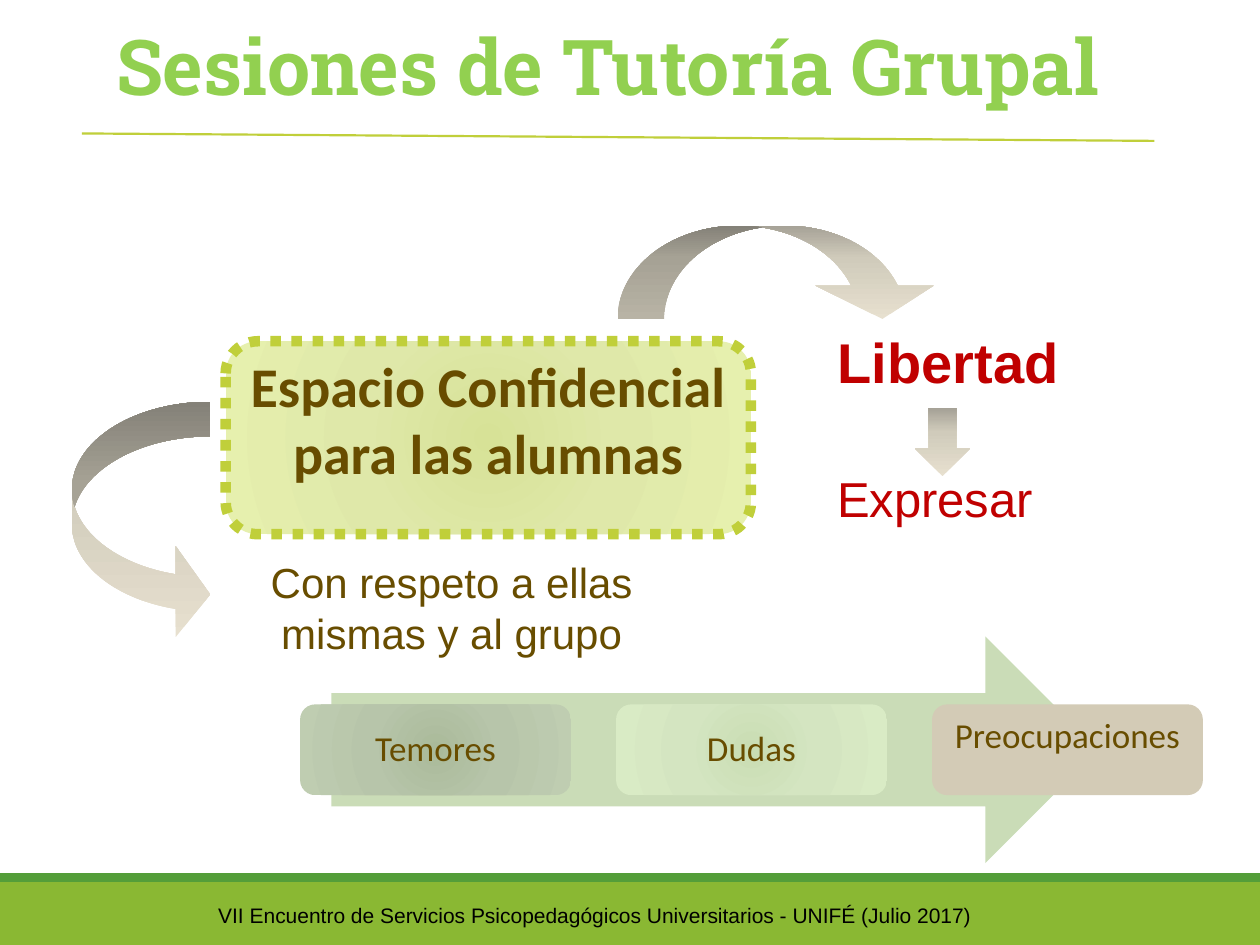
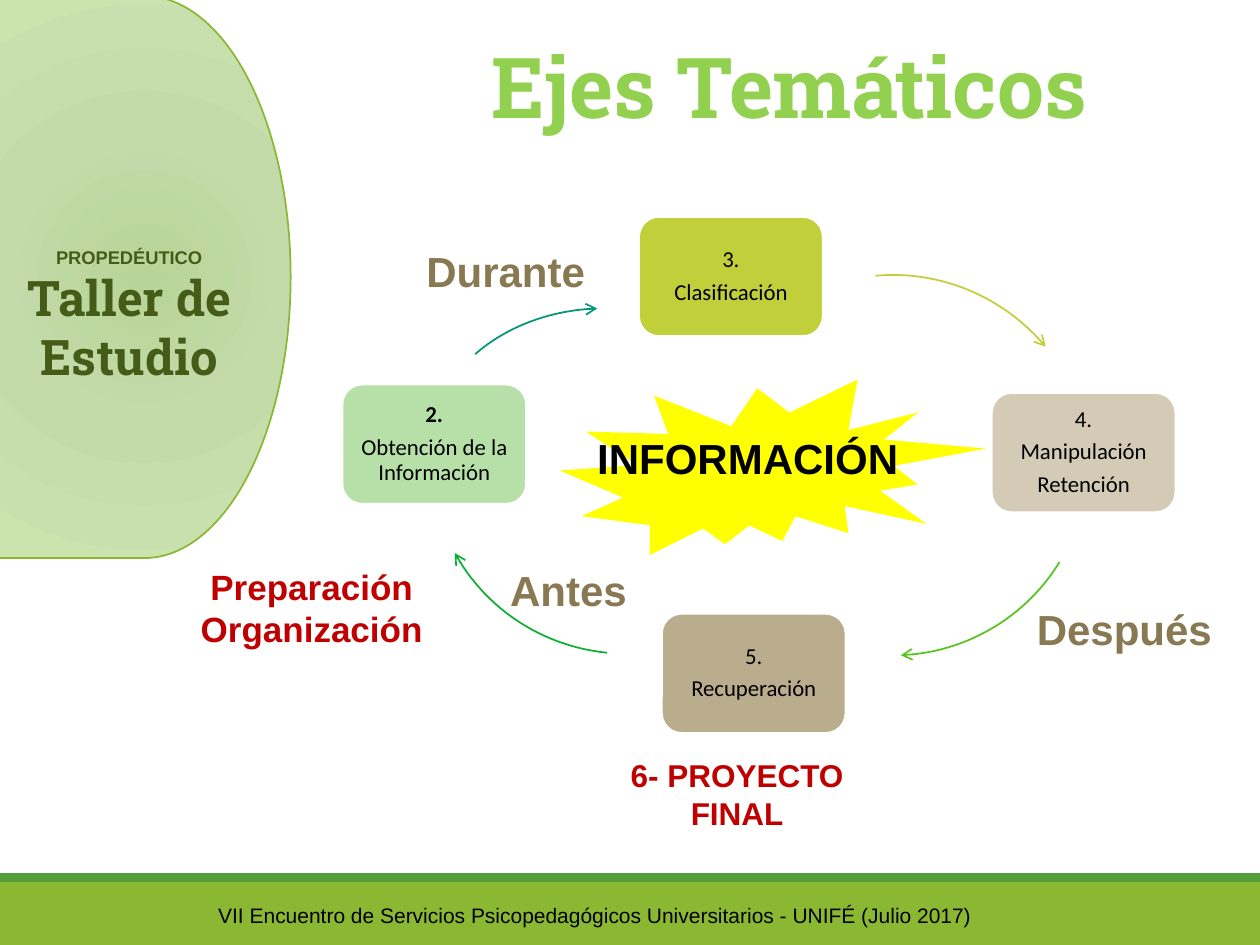
from lxml import etree
from pptx import Presentation
from pptx import util as u
from pptx.dml.color import RGBColor
from pptx.enum import dml, shapes, text
from pptx.oxml import parse_xml
from pptx.oxml.ns import nsdecls, qn

COLOURS = {
    "band": "8AB833", "strip": "549E39", "title": "92D050", "black": "000000",
    "white": "FFFFFF", "brown": "684D00", "red": "C00000", "taupe": "887952",
    "olive": "455C19", "lime": "C0CF3A", "arrow": "CADCB7", "sand": "D3CBB6",
    "mint": "B7E0A8", "tan": "BAAD8D", "yellow": "FFFF00",
    "green": "57C51F", "emerald": "0EB032", "teal": "029676",
}
# Each gradient lists (position in %, colour)
GRADIENTS = {
    "lime": [(0, "D7E297"), (45, "DFE8A9"), (100, "E6F0AE")],
    "stone": [(0, "E7E0CF"), (65, "D0CBBB"), (100, "A6A297")],
    "sage": [(0, "AABA9A"), (45, "B7C5AA"), (100, "BFCDB1")],
    "pale": [(0, "C9DDB3"), (45, "D4E5C1"), (100, "D9EBC5")],
    "leaf": [(0, "B8D498"), (45, "C3DBA9"), (100, "CAE3AF")],
}
RADIAL = ('<a:path path="circle"><a:fillToRect l="100000" t="100000" '
          'r="100000" b="100000"/></a:path>')
UPWARD = '<a:lin ang="16200000" scaled="0"/>'
FOOTER = ("VII Encuentro de Servicios Psicopedagógicos Universitarios - "
          "UNIFÉ (Julio 2017)")
SHAPE = shapes.MSO_SHAPE
CENTER, LEFT = text.PP_ALIGN.CENTER, text.PP_ALIGN.LEFT
TOP, MIDDLE = text.MSO_ANCHOR.TOP, text.MSO_ANCHOR.MIDDLE


def colour(name):
    return RGBColor.from_string(COLOURS[name])


def lengths(*values):
    return [u.Cm(value) for value in values]


# ---- Shared building blocks ----
def set_font(font, size, name, ink, bold=False):
    font.size, font.name, font.bold = u.Pt(size), name, bold
    font.color.rgb = colour(ink)


def write(frame, lines, size, ink, name="Arial", bold=False, align=CENTER,
          anchor=TOP, wrap=True, inset=None, line_spacing=None, after=0):
    frame.word_wrap, frame.vertical_anchor = wrap, anchor
    frame.auto_size = text.MSO_AUTO_SIZE.NONE
    if inset is not None:
        frame.margin_left = frame.margin_right = u.Cm(inset)
        frame.margin_top = frame.margin_bottom = u.Cm(inset)
    for index, line in enumerate(lines):
        paragraph = frame.add_paragraph() if index else frame.paragraphs[0]
        paragraph.text, paragraph.alignment = line, align
        paragraph.space_before = u.Pt(0)
        paragraph.space_after = u.Pt(after)
        paragraph.line_spacing = line_spacing
        set_font(paragraph.font, size, name, ink, bold)
    return frame


def add_label(slide, box, lines, size, ink, **style):
    label = slide.shapes.add_textbox(*lengths(*box))
    return write(label.text_frame, lines, size, ink, **style)


def add_figure(slide, kind, box, fill=None, line=None, width=1, adjust=()):
    shape = slide.shapes.add_shape(kind, *lengths(*box))
    shape.shadow.inherit = False
    for index, value in enumerate(adjust):
        shape.adjustments[index] = value
    if fill:
        shape.fill.solid()
        shape.fill.fore_color.rgb = colour(fill)
    if line:
        shape.line.color.rgb = colour(line)
        shape.line.width = u.Pt(width)
    else:
        shape.line.fill.background()
    return shape


def fill_gradient(shape, name, direction=RADIAL):
    stops = "".join(
        f'<a:gs pos="{position * 1000}"><a:srgbClr val="{value}"/></a:gs>'
        for position, value in GRADIENTS[name])
    gradient = parse_xml(f'<a:gradFill {nsdecls("a")} rotWithShape="1">'
                         f'<a:gsLst>{stops}</a:gsLst>{direction}</a:gradFill>')
    shape.fill.background()
    properties = shape.element.spPr
    properties.replace(properties.find(qn("a:noFill")), gradient)


def add_curved_arrow(slide, origin, points, ink, steps=24):
    """Draw a cubic curve through four control points, with an arrowhead."""
    track = []
    for step in range(steps + 1):
        t = step / steps
        weights = ((1 - t) ** 3, 3 * t * (1 - t) ** 2, 3 * t * t * (1 - t), t ** 3)
        track.append([u.Cm(origin[axis] + sum(
            weight * point[axis] for weight, point in zip(weights, points)))
            for axis in (0, 1)])
    builder = slide.shapes.build_freeform(*track[0])
    builder.add_line_segments(track[1:], close=False)
    arrow = builder.convert_to_shape()
    arrow.shadow.inherit = False
    arrow.fill.background()
    arrow.line.color.rgb = colour(ink)
    arrow.line.width = u.Pt(1)
    etree.SubElement(arrow.line._get_or_add_ln(), qn("a:tailEnd"), type="arrow")


def start_slide(presentation, title, box, size):
    slide = presentation.slides.add_slide(presentation.slide_layouts[5])
    heading = slide.shapes.title
    heading.left, heading.top, heading.width, heading.height = lengths(*box)
    write(heading.text_frame, [title], size, "title", name="Roboto Slab", bold=True)
    # Bands and footer
    add_figure(slide, SHAPE.RECTANGLE, (0, 17.78, 25.4, 1.27), "band")
    add_figure(slide, SHAPE.RECTANGLE, (0, 17.6, 25.4, 0.18), "strip")
    add_label(slide, (0, 18.06, 24, 0.99), [FOOTER], 12, "black")
    return slide


# ---- Slide 1: group tutoring ----
def add_title_rule(slide, start, end):
    rule = slide.shapes.add_connector(shapes.MSO_CONNECTOR.STRAIGHT,
                                      *lengths(*start, *end))
    rule.line.color.rgb = colour("lime")
    rule.line.width = u.Pt(1.25)
    etree.SubElement(rule.element.spPr, qn("a:effectLst"))


def add_confidential_space(slide, box):
    panel = add_figure(slide, SHAPE.ROUNDED_RECTANGLE, box, line="lime", width=6)
    fill_gradient(panel, "lime")
    panel.line.dash_style = dml.MSO_LINE.ROUND_DOT
    frame = write(panel.text_frame, ["Espacio Confidencial para las alumnas"],
                  32, "brown", name="Calibri", bold=True, anchor=MIDDLE)
    frame.margin_bottom = u.Cm(0.9)


def add_stone_arrows(slide):
    for kind, box, adjust in (
            (SHAPE.CURVED_RIGHT_ARROW, (1.45, 8.1, 2.79, 4.8), (0.25, 0.657, 0.25)),
            (SHAPE.CURVED_DOWN_ARROW, (12.45, 4.55, 6.53, 1.88), (0.5, 1.266, 0.356)),
            (SHAPE.DOWN_ARROW, (18.44, 8.23, 1.12, 1.37), ())):
        arrow = add_figure(slide, kind, box, adjust=adjust)
        fill_gradient(arrow, "stone", UPWARD)


def add_concerns(slide, box):
    left, top, width, height = box
    add_figure(slide, SHAPE.RIGHT_ARROW, (left + 0.63, top, 15.47, height), "arrow")
    card_width, card_height = 5.46, 1.83
    pitch = (width - card_width) / 2
    concerns = (("Temores", "sage", MIDDLE), ("Dudas", "pale", MIDDLE),
                ("Preocupaciones", None, TOP))
    for index, (name, gradient, anchor) in enumerate(concerns):
        card = add_figure(slide, SHAPE.ROUNDED_RECTANGLE,
                          (left + index * pitch, top + (height - card_height) / 2,
                           card_width, card_height), "sand")
        if gradient:
            fill_gradient(card, gradient)
        write(card.text_frame, [name], 20, "brown", name="Calibri",
              anchor=anchor, inset=0.2, line_spacing=0.9)


def build_group_sessions(presentation):
    slide = start_slide(presentation, "Sesiones de Tutoría Grupal",
                        (0.46, 0.25, 23.6, 2.13), 44)
    add_title_rule(slide, (1.65, 2.69), (23.27, 2.84))
    add_confidential_space(slide, (4.55, 6.88, 10.59, 3.89))
    add_stone_arrows(slide)
    add_label(slide, (4.9, 11.1, 8.41, 3.33),
              ["Con respeto a ellas mismas y al grupo"], 24, "brown")
    add_label(slide, (16.64, 6.48, 5, 1.63), ["Libertad"], 32, "red",
              bold=True, align=LEFT, wrap=False)
    add_label(slide, (15.65, 9.32, 6.4, 1.45), ["Expresar"], 28, "red")
    add_concerns(slide, (6.05, 12.83, 18.2, 4.57))


# ---- Slide 2: thematic axes ----
def add_workshop_panel(slide, box):
    left, top, width, height = box
    panel = add_figure(slide, SHAPE.FLOWCHART_DELAY, box, line="band")
    fill_gradient(panel, "leaf")
    frame = add_label(slide, (left + 0.03, top + 4.91, width - 0.68, 3.1),
                      ["PROPEDÉUTICO", "Taller de Estudio"], 28, "olive",
                      name="Roboto Slab", bold=True)
    set_font(frame.paragraphs[0].font, 10.5, "Arial", "olive", True)


def add_information_cycle(slide, origin):
    left, top = origin
    # Stages
    stages = (
        (5.98, 0, "lime", ["3.", "Clasificación"]),
        (13.09, 3.55, "sand", ["4.", "Manipulación", "Retención"]),
        (6.44, 8, "tan", ["5.", "Recuperación"]),
        (0, 3.38, "mint", ["2.", "Obtención de la Información"]),
    )
    for x, y, fill, lines in stages:
        stage = add_figure(slide, SHAPE.ROUNDED_RECTANGLE,
                           (left + x, top + y, 3.71, 2.41), fill, "white", 1.25)
        frame = write(stage.text_frame, lines, 13, "black", name="Calibri",
                      anchor=MIDDLE, inset=0.15, line_spacing=0.9, after=4.5)
        frame.paragraphs[0].font.bold = lines[0] == "2."
    # Arrows between stages
    curves = (
        ("lime", ((10.75, 1.19), (12.07, 1.07), (13.34, 1.62), (14.18, 2.62))),
        ("green", ((14.46, 6.96), (13.78, 8.08), (12.56, 8.79), (11.26, 8.84))),
        ("emerald", ((5.34, 8.79), (4.05, 8.66), (2.9, 7.92), (2.27, 6.78))),
        ("teal", ((2.68, 2.77), (3.36, 2.18), (4.25, 1.88), (5.14, 1.85))),
    )
    for ink, points in curves:
        add_curved_arrow(slide, origin, points, ink)
    # Phases
    for name, x, y, width in (("Durante", 1.43, 0.46, 3.73),
                              ("Antes", 3.11, 6.88, 2.9),
                              ("Después", 13.72, 7.67, 4.09)):
        add_label(slide, (left + x, top + y, width, 1.3), [name], 24, "taupe",
                  bold=True, wrap=False)


def add_information_burst(slide, box):
    left, top, width, height = box
    burst = add_figure(slide, SHAPE.EXPLOSION2, box, "yellow")
    burst.rotation = 4.5
    add_label(slide, (left + 0.49, top + 1.07, width - 0.4, 1.3),
              ["INFORMACIÓN"], 24, "black", bold=True, align=LEFT)


def build_thematic_axes(presentation):
    slide = start_slide(presentation, "Ejes Temáticos",
                        (9.09, 0.56, 13.64, 2.31), 48)
    add_workshop_panel(slide, (-0.03, -0.08, 5.89, 11.33))
    add_information_cycle(slide, (6.9, 4.37))
    add_information_burst(slide, (11.3, 7.52, 8.53, 3.86))
    add_label(slide, (3.3, 11.28, 5.97, 1.96), ["Preparación", "Organización"],
              20, "red", bold=True)
    add_label(slide, (10.62, 15.11, 8.48, 1.8), ["6- PROYECTO", "FINAL"],
              18, "red", bold=True)


def main():
    presentation = Presentation()
    presentation.slide_width, presentation.slide_height = lengths(25.4, 19.05)
    build_group_sessions(presentation)
    build_thematic_axes(presentation)
    presentation.save("out.pptx")


if __name__ == "__main__":
    main()
